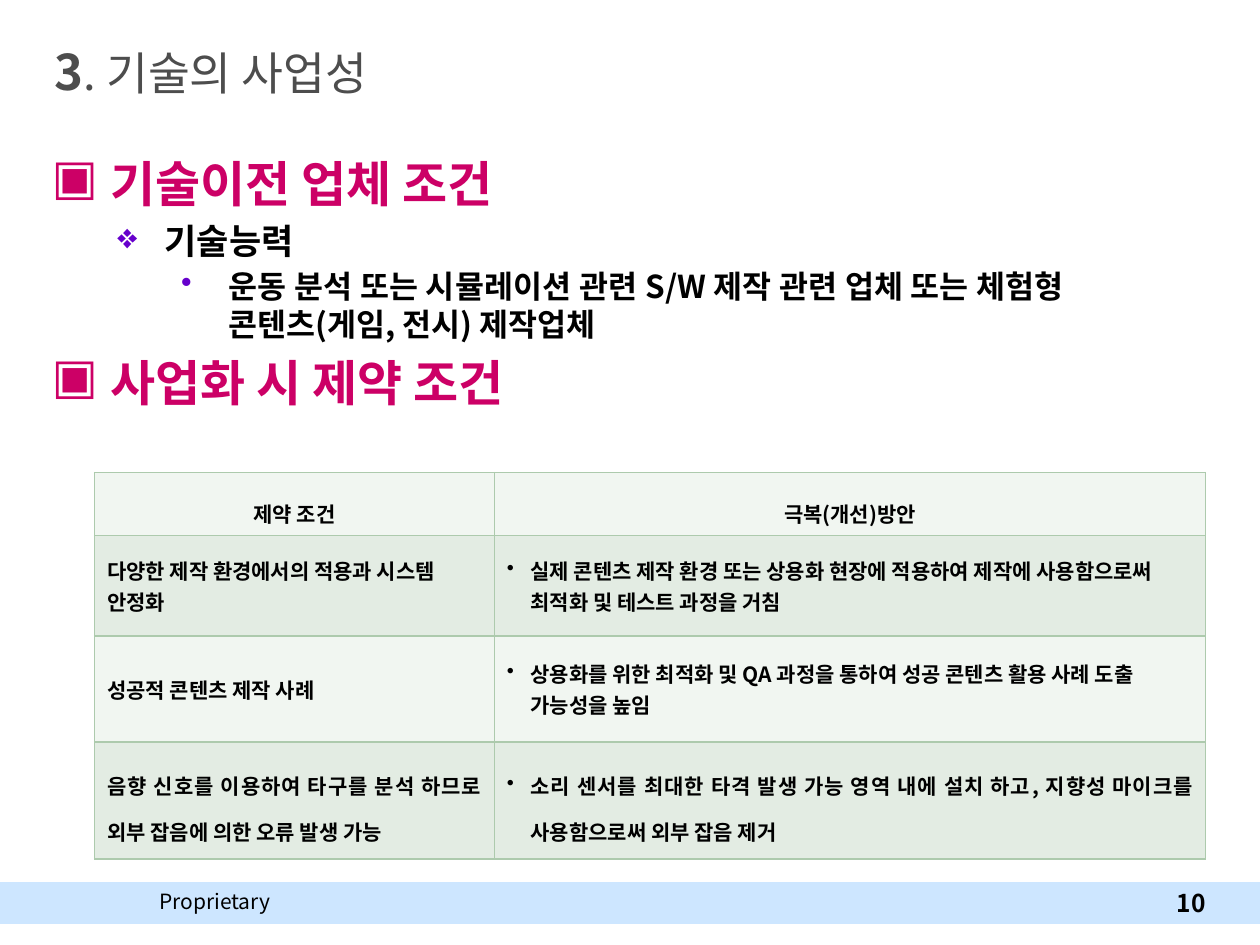
from lxml.etree import SubElement
from pptx import Presentation
from pptx.dml.color import RGBColor
from pptx.enum.shapes import MSO_SHAPE as Shape
from pptx.enum.text import MSO_ANCHOR as Anchor, PP_ALIGN as Align
from pptx.oxml.ns import qn
from pptx.util import Pt

FONT = "Noto Sans CJK KR"
BLACK, GRAY, MAGENTA, PURPLE = "000000", "4D4D4D", "CC0066", "6600CC"
BAND_BLUE, BORDER_GREEN = "CDE6FF", "ADCAAD"
ROW_FILLS = ["F1F6F1", "E3ECE3"]

# level: bullet, bullet colour, left margin, hanging indent, size, text colour
LEVELS = [
    ("▣", MAGENTA, 27, 27, 28, MAGENTA),
    ("❖", PURPLE, 60, 22.5, 20, BLACK),
    ("•", PURPLE, 101, 27, 18, BLACK),
]
OUTLINE = [
    (0, " 기술이전 업체 조건"),
    (1, " 기술능력"),
    (2, "운동 분석 또는 시뮬레이션 관련 S/W 제작 관련 업체 또는 체험형 콘텐츠(게임, 전시) 제작업체"),
    (0, " 사업화 시 제약 조건"),
]
CONSTRAINTS = [
    ("제약 조건", "극복(개선)방안"),
    ("다양한 제작 환경에서의 적용과 시스템 안정화",
     "실제 콘텐츠 제작 환경 또는 상용화 현장에 적용하여 제작에 사용함으로써 최적화 및 테스트 과정을 거침"),
    ("성공적 콘텐츠 제작 사례",
     "상용화를 위한 최적화 및 QA 과정을 통하여 성공 콘텐츠 활용 사례 도출 가능성을 높임"),
    ("음향 신호를 이용하여 타구를 분석 하므로 외부 잡음에 의한 오류 발생 가능",
     "소리 센서를 최대한 타격 발생 가능 영역 내에 설치 하고, 지향성 마이크를 사용함으로써 외부 잡음 제거"),
]
ROW_STYLES = [(Align.CENTER, 1.6), (Align.LEFT, 1.0), (Align.LEFT, 1.0), (Align.JUSTIFY, 1.5)]


def rgb(value):
    return RGBColor.from_string(value)


def add_run(paragraph, text, size, color=BLACK, bold=False):
    run = paragraph.add_run()
    run.text = text
    font = run.font
    font.size, font.bold, font.name = Pt(size), bold, FONT
    font.color.rgb = rgb(color)
    SubElement(font._element, qn("a:ea"), typeface=FONT)


def add_bullet(paragraph, character, color, margin, hanging):
    properties = paragraph._p.get_or_add_pPr()
    properties.set("marL", str(Pt(margin)))
    properties.set("indent", str(-Pt(hanging)))
    bullet_color = SubElement(properties, qn("a:buClr"))
    SubElement(bullet_color, qn("a:srgbClr"), val=color)
    SubElement(properties, qn("a:buChar"), char=character)


def add_text_frame(slide, box, anchor=Anchor.TOP, wrap=True):
    frame = slide.shapes.add_textbox(*map(Pt, box)).text_frame
    frame.word_wrap, frame.vertical_anchor = wrap, anchor
    return frame


def add_footer(slide, box):
    left, top, width, height = box
    band = slide.shapes.add_shape(Shape.RECTANGLE, *map(Pt, box))
    band.shadow.inherit = False
    band.fill.solid()
    band.fill.fore_color.rgb = rgb(BAND_BLUE)
    band.line.fill.background()
    label = add_text_frame(slide, (left + 84, top, 96, 22))
    add_run(label.paragraphs[0], "Proprietary", 12)
    number = add_text_frame(slide, (left + width - 58.5, top, 34.5, height), Anchor.MIDDLE, False)
    number.paragraphs[0].alignment = Align.RIGHT
    add_run(number.paragraphs[0], "10", 14, bold=True)


def add_title(slide, box):
    paragraph = add_text_frame(slide, box, Anchor.MIDDLE).paragraphs[0]
    add_run(paragraph, "3", 28, GRAY, True)
    add_run(paragraph, ". 기술의 사업성", 26, GRAY)


def add_outline(slide, box):
    frame = add_text_frame(slide, box)
    for index, (level, text) in enumerate(OUTLINE):
        character, bullet_color, margin, hanging, size, color = LEVELS[level]
        paragraph = frame.add_paragraph() if index else frame.paragraphs[0]
        add_bullet(paragraph, character, bullet_color, margin, hanging)
        paragraph.level = level
        paragraph.alignment = Align.JUSTIFY
        paragraph.line_spacing = 1.0
        if index:
            paragraph.space_before = Pt(size * 0.2)
        add_run(paragraph, text, size, color, True)


def add_borders(cell):
    properties = cell._tc.get_or_add_tcPr()
    for side in ("lnL", "lnR", "lnT", "lnB"):
        line = SubElement(properties, qn(f"a:{side}"), w=str(Pt(1)))
        fill = SubElement(line, qn("a:solidFill"))
        SubElement(fill, qn("a:srgbClr"), val=BORDER_GREEN)


def add_constraint_table(slide, box, column_widths, row_heights):
    table = slide.shapes.add_table(len(row_heights), len(column_widths), *map(Pt, box)).table
    for column, width in zip(table.columns, column_widths):
        column.width = Pt(width)
    for row_index, texts in enumerate(CONSTRAINTS):
        table.rows[row_index].height = Pt(row_heights[row_index])
        alignment, spacing = ROW_STYLES[row_index]
        for column_index, text in enumerate(texts):
            cell = table.cell(row_index, column_index)
            add_borders(cell)
            cell.fill.solid()
            cell.fill.fore_color.rgb = rgb(ROW_FILLS[row_index % 2])
            cell.vertical_anchor = Anchor.MIDDLE
            cell.margin_top = cell.margin_bottom = Pt(3.6 if row_index else 0)
            paragraph = cell.text_frame.paragraphs[0]
            if row_index and column_index:
                add_bullet(paragraph, "•", BLACK, 13.5, 13.5)
            paragraph.alignment, paragraph.line_spacing = alignment, spacing
            add_run(paragraph, text, 12, bold=True)


def main():
    presentation = Presentation()
    presentation.slide_width, presentation.slide_height = Pt(720), Pt(540)
    slide = presentation.slides.add_slide(presentation.slide_layouts[6])
    add_footer(slide, (0, 504, 720, 24))
    add_title(slide, (24, 20, 564, 41))
    add_outline(slide, (22.5, 84, 592.5, 214))
    add_constraint_table(slide, (54, 270, 635, 221), (228.5, 406.5), (36, 57.5, 60.5, 67))
    presentation.save("out.pptx")


if __name__ == "__main__":
    main()
